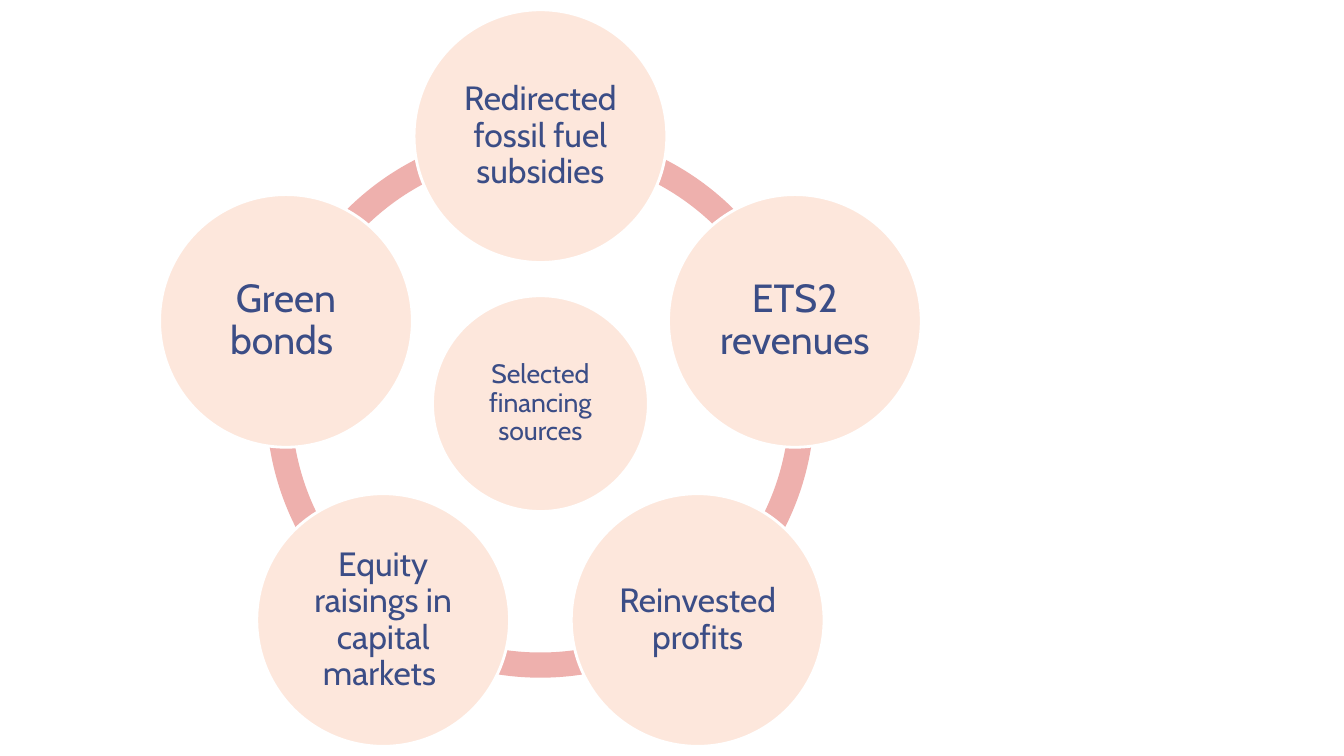
from dataclasses import dataclass
from math import cos, radians, sin

from pptx import Presentation
from pptx.dml.color import RGBColor
from pptx.enum.shapes import MSO_SHAPE
from pptx.enum.text import MSO_ANCHOR, PP_ALIGN
from pptx.util import Inches, Pt


@dataclass(frozen=True)
class Theme:
    font: str = "Cabin"
    text: RGBColor = RGBColor(0x3B, 0x4D, 0x86)
    circle: RGBColor = RGBColor(0xFD, 0xE7, 0xDC)
    outline: RGBColor = RGBColor(0xFF, 0xFF, 0xFF)
    ring: RGBColor = RGBColor(0xEE, 0xB0, 0xAD)
    hub_size: int = 19
    long_size: int = 24
    short_size: int = 28


THEME = Theme()

HUB = "Selected financing sources"
# Clockwise from the top
SOURCES = [
    ("Redirected fossil fuel subsidies", THEME.long_size),
    ("ETS2 revenues", THEME.short_size),
    ("Reinvested profits", THEME.long_size),
    ("Equity raisings in capital markets ", THEME.long_size),
    ("Green bonds ", THEME.short_size),
]


def add_round(slide, preset, center_x, center_y, diameter, fill):
    """Place a filled square-boxed shape around a centre point."""
    figure = slide.shapes.add_shape(
        preset,
        Inches(center_x - diameter / 2), Inches(center_y - diameter / 2),
        Inches(diameter), Inches(diameter),
    )
    figure.shadow.inherit = False
    figure.fill.solid()
    figure.fill.fore_color.rgb = fill
    return figure


def add_ring_segment(slide, center_x, center_y, diameter, start, end):
    segment = add_round(slide, MSO_SHAPE.BLOCK_ARC, center_x, center_y,
                        diameter, THEME.ring)
    segment.line.fill.background()
    # Angles are stored in 1/60000 degree, adjustments in 1/100000
    for index, value in enumerate((start * 0.6, end * 0.6, 0.046)):
        segment.adjustments[index] = value


def add_circle(slide, center_x, center_y, diameter, label, size):
    circle = add_round(slide, MSO_SHAPE.OVAL, center_x, center_y,
                       diameter, THEME.circle)
    circle.line.color.rgb = THEME.outline
    circle.line.width = Pt(2)

    frame = circle.text_frame
    inset = Inches(0.03)
    frame_format = {
        "word_wrap": True, "vertical_anchor": MSO_ANCHOR.MIDDLE,
        "margin_left": inset, "margin_right": inset,
        "margin_top": inset, "margin_bottom": inset,
    }
    for name, value in frame_format.items():
        setattr(frame, name, value)

    paragraph = frame.paragraphs[0]
    paragraph.alignment = PP_ALIGN.CENTER
    paragraph.line_spacing = 0.9
    run = paragraph.add_run()
    run.text = label
    for name, value in {"name": THEME.font, "size": Pt(size)}.items():
        setattr(run.font, name, value)
    run.font.color.rgb = THEME.text


def add_radial_cycle(slide, left, top, width, height):
    """Ring of sources around a hub, sized from the height of its box."""
    center_x = left + width / 2
    center_y = top + height * 0.534
    ring_diameter = height * 0.742
    orbit = height * 0.362
    source_diameter = height * 0.342
    hub_diameter = height * 0.292
    step = 360 / len(SOURCES)

    # Ring segments, from the upper left round to the upper right
    for index in range(len(SOURCES)):
        end = (270 - index * step) % 360
        add_ring_segment(slide, center_x, center_y, ring_diameter,
                         (end - step) % 360, end)

    # Hub
    add_circle(slide, center_x, center_y, hub_diameter, HUB, THEME.hub_size)

    # Sources
    for index, (label, size) in enumerate(SOURCES):
        angle = radians(index * step - 90)
        add_circle(slide, center_x + orbit * cos(angle),
                   center_y + orbit * sin(angle),
                   source_diameter, label, size)


def main():
    presentation = Presentation()
    presentation.slide_width = Inches(13.33)
    presentation.slide_height = Inches(7.5)
    slide = presentation.slides.add_slide(presentation.slide_layouts[6])
    add_radial_cycle(slide, left=1.58, top=0.09, width=7.56, height=7.33)
    presentation.save("out.pptx")


if __name__ == "__main__":
    main()
